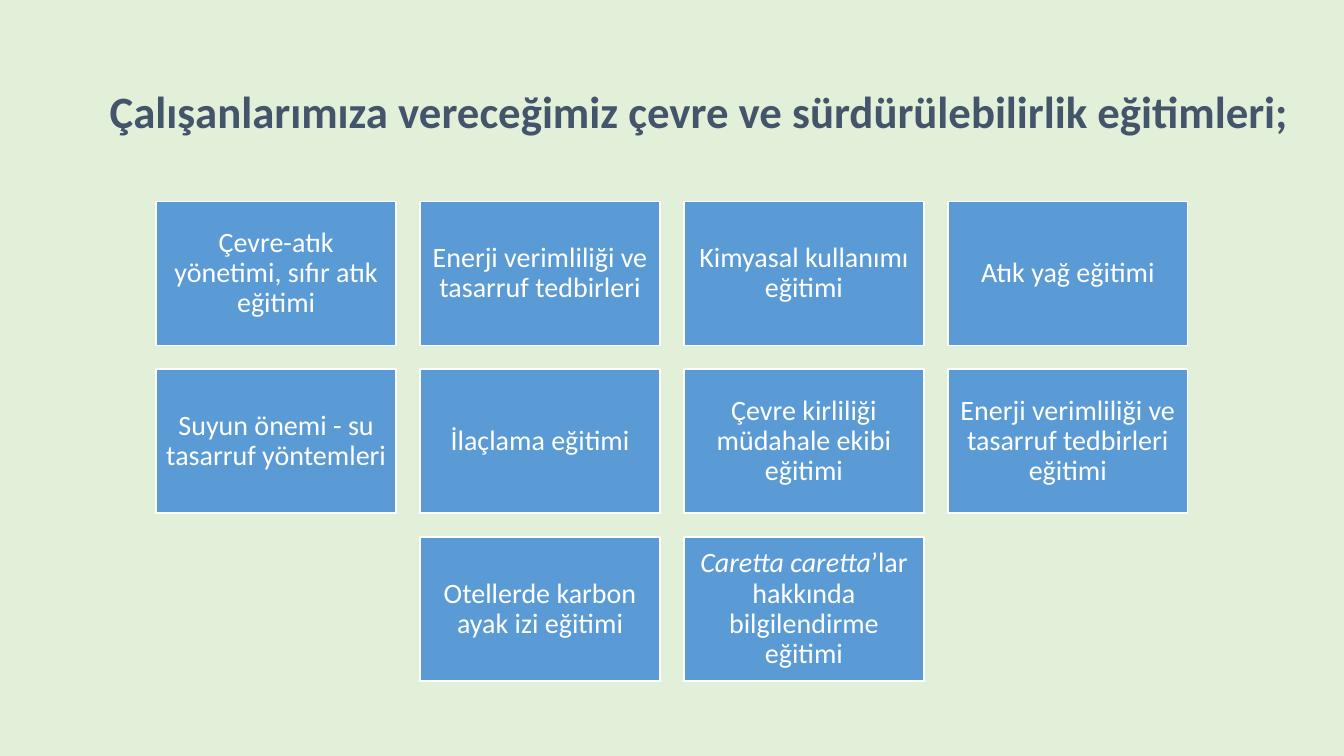
from pptx import Presentation
from pptx.dml.color import RGBColor
from pptx.enum.shapes import MSO_SHAPE
from pptx.enum.text import MSO_ANCHOR, PP_ALIGN
from pptx.util import Pt

# Content: each box is a list of (text, italic) runs
TITLE = "Çalışanlarımıza vereceğimiz çevre ve sürdürülebilirlik eğitimleri;"
ROWS = [
    [
        [("Çevre-atık yönetimi, sıfır atık eğitimi", False)],
        [("Enerji verimliliği ve tasarruf tedbirleri", False)],
        [("Kimyasal kullanımı eğitimi", False)],
        [("Atık yağ eğitimi", False)],
    ],
    [
        [("Suyun önemi - su tasarruf yöntemleri", False)],
        [("İlaçlama eğitimi", False)],
        [("Çevre kirliliği müdahale ekibi eğitimi", False)],
        [("Enerji verimliliği ve tasarruf tedbirleri eğitimi", False)],
    ],
    [
        [("Otellerde karbon ayak izi eğitimi", False)],
        [("Caretta caretta", True), ("’lar hakkında bilgilendirme eğitimi", False)],
    ],
]

# Layout in points
SLIDE_W, SLIDE_H = 960, 540
BOX_W, BOX_H, GAP = 171.4, 102.8, 17.1
GRID_TOP = 143.8
INSET = 6


def color(value):
    return RGBColor.from_string(value)


def format_paragraph(p, size, hex_color, bold=False):
    p.alignment = PP_ALIGN.CENTER
    p.line_spacing = 0.9
    p.font.name = "Calibri"
    p.font.size = Pt(size)
    p.font.bold = bold
    p.font.color.rgb = color(hex_color)


def add_title(s):
    tf = s.shapes.add_textbox(Pt(66), Pt(28.8), Pt(867.6), Pt(105)).text_frame
    tf.word_wrap = True
    tf.vertical_anchor = MSO_ANCHOR.MIDDLE
    p = tf.paragraphs[0]
    p.text = TITLE
    format_paragraph(p, 32, "44546A", bold=True)


def add_box(s, left, top, runs):
    sp = s.shapes.add_shape(MSO_SHAPE.RECTANGLE, Pt(left), Pt(top), Pt(BOX_W), Pt(BOX_H))
    sp.shadow.inherit = False
    sp.fill.solid()
    sp.fill.fore_color.rgb = color("5B9BD5")
    sp.line.color.rgb = color("FFFFFF")
    sp.line.width = Pt(1)
    tf = sp.text_frame
    tf.word_wrap = True
    tf.vertical_anchor = MSO_ANCHOR.MIDDLE
    tf.margin_left = tf.margin_right = tf.margin_top = tf.margin_bottom = Pt(INSET)
    p = tf.paragraphs[0]
    format_paragraph(p, 20, "FFFFFF")
    for text, italic in runs:
        r = p.add_run()
        r.text = text
        r.font.italic = italic


def main():
    prs = Presentation()
    prs.slide_width, prs.slide_height = Pt(SLIDE_W), Pt(SLIDE_H)
    s = prs.slides.add_slide(prs.slide_layouts[6])
    s.background.fill.solid()
    s.background.fill.fore_color.rgb = color("E2F0D9")
    add_title(s)

    # Each row is centred on the slide
    for i, row in enumerate(ROWS):
        row_w = len(row) * (BOX_W + GAP) - GAP
        left = (SLIDE_W - row_w) / 2
        for j, runs in enumerate(row):
            add_box(s, left + j * (BOX_W + GAP), GRID_TOP + i * (BOX_H + GAP), runs)

    prs.save("out.pptx")


if __name__ == "__main__":
    main()
